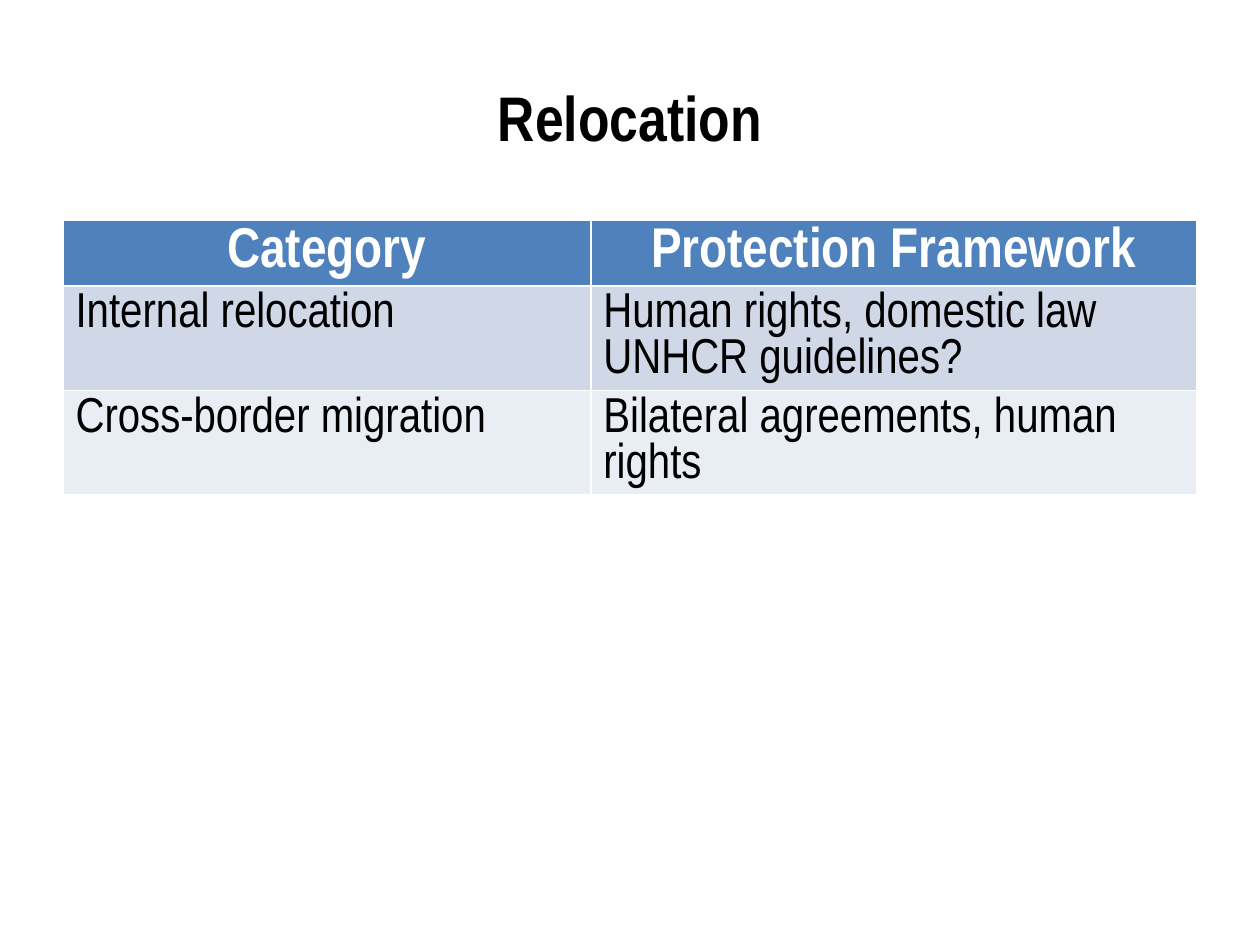
import pptx
import pptx.dml.color
import pptx.enum.text
import pptx.util

Cm = pptx.util.Cm
Pt = pptx.util.Pt
RGBColor = pptx.dml.color.RGBColor
Align = pptx.enum.text.PP_ALIGN

BLACK = RGBColor(0x00, 0x00, 0x00)
WHITE = RGBColor(0xFF, 0xFF, 0xFF)
HEADER_BLUE = RGBColor(0x4F, 0x81, 0xBD)
BANDS = [RGBColor(0xD0, 0xD8, 0xE8), RGBColor(0xE9, 0xED, 0xF4)]

TITLE_ONLY = 5
ROWS = [
    ["Category", "Protection Framework"],
    ["Internal relocation", "Human rights, domestic law\nUNHCR guidelines?"],
    ["Cross-border migration", "Bilateral agreements, human rights"],
]


class SlideBuilder:
    """Holds the text styles and the current slide."""

    font_name = "Arial Narrow"
    title_format = {"size": Pt(36), "bold": True}
    header_format = {"size": Pt(32), "bold": True}
    body_format = {"size": Pt(28), "bold": False}

    def __init__(self, deck):
        self.page = deck.slides.add_slide(deck.slide_layouts[TITLE_ONLY])

    def fill_text(self, frame, text, text_format, color, align):
        frame.text = text
        for para in frame.paragraphs:
            para.alignment = align
            for span in para.runs:
                for name, value in {"name": self.font_name, **text_format}.items():
                    setattr(span.font, name, value)
                span.font.color.rgb = color

    def title(self, text, left, top, width, height):
        box = self.page.shapes.title
        place = {"left": left, "top": top, "width": width, "height": height}
        for name, value in place.items():
            setattr(box, name, value)
        box.text_frame.vertical_anchor = pptx.enum.text.MSO_ANCHOR.MIDDLE
        self.fill_text(box.text_frame, text, self.title_format, BLACK, Align.CENTER)

    def table(self, rows, left, top, widths, row_height):
        # The default table style supplies the white cell borders
        table = self.page.shapes.add_table(
            len(rows), len(widths), left, top, sum(widths), row_height * len(rows)
        ).table
        for column, width in zip(table.columns, widths):
            column.width = width
        for row_index, texts in enumerate(rows):
            if row_index == 0:
                fill = HEADER_BLUE
                style = (self.header_format, WHITE, Align.CENTER)
            else:
                fill = BANDS[(row_index - 1) % len(BANDS)]
                style = (self.body_format, BLACK, Align.LEFT)
            for column_index, text in enumerate(texts):
                cell = table.cell(row_index, column_index)
                cell.fill.solid()
                cell.fill.fore_color.rgb = fill
                self.fill_text(cell.text_frame, text, *style)


def main():
    deck = pptx.Presentation()
    deck.slide_width, deck.slide_height = Cm(25.4), Cm(19.05)
    builder = SlideBuilder(deck)

    # Heading
    builder.title("Relocation", Cm(1.27), Cm(0.76), Cm(22.86), Cm(3.18))

    # Relocation categories; rows grow to fit their text
    builder.table(ROWS, Cm(1.27), Cm(4.45), [Cm(10.64), Cm(12.22)], Cm(1.04))

    deck.save("out.pptx")


if __name__ == "__main__":
    main()
